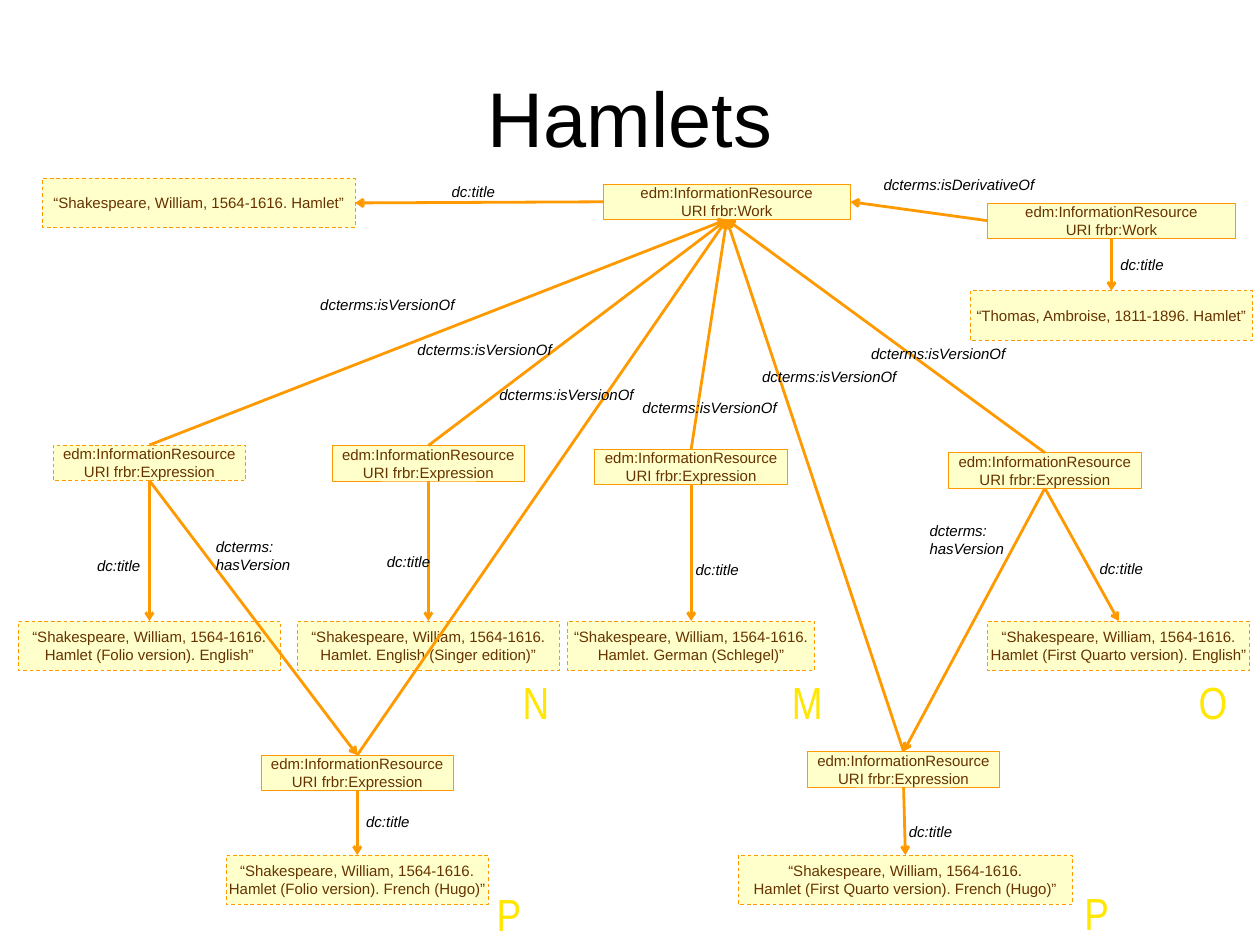
from dataclasses import dataclass

from pptx import Presentation
from pptx.dml.color import RGBColor
from pptx.enum import dml, shapes, text
from pptx.oxml.ns import qn
from pptx.util import Emu, Inches, Pt
from lxml import etree

# Slide and its grid: 140 columns by 105 rows
WIDTH, HEIGHT = Inches(14), Inches(10.5)
COL, ROW = WIDTH / 140, HEIGHT / 105

CREAM = RGBColor(0xFF, 0xFF, 0xCC)
ORANGE = RGBColor(0xFF, 0x99, 0x00)
BROWN = RGBColor(0x66, 0x33, 0x00)
BLACK = RGBColor(0x00, 0x00, 0x00)
YELLOW = RGBColor(0xFF, 0xE7, 0x01)

# Connection sites of a rectangle
TOP, LEFT, BOTTOM, RIGHT = range(4)

RESOURCE_H, LITERAL_H, LETTER_W = 3.95, 5.5, 3.5
WORK = ("edm:InformationResource", "URI frbr:Work")
EXPRESSION = ("edm:InformationResource", "URI frbr:Expression")
VERSION = ("dcterms:isVersionOf",)
HAS_VERSION = ("dcterms:", "hasVersion")
TITLE = ("dc:title",)
AUTHOR = "“Shakespeare, William, 1564-1616."


@dataclass
class Node:
    """A box placed by its centre column and its top row."""
    centre: float
    top: float
    width: float
    lines: tuple[str, ...]
    height: float = RESOURCE_H
    dashed: bool = False


@dataclass
class Link:
    """An arrow between two nodes, with its label's column and row."""
    start: str
    end: str
    label: tuple[str, ...]
    col: float
    row: float
    sites: tuple[int, int] = (BOTTOM, TOP)


def work(centre: float, top: float) -> Node:
    return Node(centre, top, 27.5, WORK)


def expression(centre: float, top: float, dashed: bool = False) -> Node:
    return Node(centre, top, 21.4, EXPRESSION, dashed=dashed)


def literal(centre: float, top: float, width: float, *lines: str) -> Node:
    return Node(centre, top, width, lines, LITERAL_H, True)


def version(start: str, col: float, row: float) -> Link:
    return Link(start, "work", VERSION, col, row, (TOP, BOTTOM))


NODES = {
    "work": work(80.75, 20.45),
    "opera": work(123.5, 22.55),
    "folio": expression(16.6, 49.45, dashed=True),
    "singer": expression(47.6, 49.5),
    "schlegel": expression(76.8, 49.9),
    "quarto": expression(116.1, 50.3),
    "folio_fr": expression(39.7, 83.9),
    "quarto_fr": expression(100.4, 83.5),
    "work_title": literal(22.1, 19.8, 34.7, "“Shakespeare, William, 1564-1616. Hamlet”"),
    "opera_title": literal(123.5, 32.3, 31.4, "“Thomas, Ambroise, 1811-1896. Hamlet”"),
    "folio_title": literal(16.6, 69, 29.1, AUTHOR, "Hamlet (Folio version). English”"),
    "singer_title": literal(47.6, 69, 29.1, AUTHOR, "Hamlet. English (Singer edition)”"),
    "schlegel_title": literal(76.8, 69, 27.4, AUTHOR, "Hamlet. German (Schlegel)”"),
    "quarto_title": literal(124.3, 69, 29.1, AUTHOR, "Hamlet (First Quarto version). English”"),
    "folio_fr_title": literal(39.7, 95, 29.1, AUTHOR, "Hamlet (Folio version). French (Hugo)”"),
    "quarto_fr_title": literal(100.6, 95, 37.1, AUTHOR, "Hamlet (First Quarto version). French (Hugo)”"),
}

LINKS = [
    version("folio", 34.6, 32.3),
    version("singer", 45.4, 37.4),
    version("folio_fr", 54.5, 42.3),
    version("schlegel", 70.4, 43.8),
    version("quarto_fr", 83.7, 40.4),
    version("quarto", 95.8, 37.8),
    Link("opera", "work", ("dcterms:isDerivativeOf",), 97.2, 19, (LEFT, RIGHT)),
    Link("work", "work_title", TITLE, 49.2, 19.8, (LEFT, RIGHT)),
    Link("opera", "opera_title", TITLE, 123.5, 27.9),
    Link("folio", "folio_title", TITLE, 9.8, 61.3),
    Link("singer", "singer_title", TITLE, 42, 60.9),
    Link("schlegel", "schlegel_title", TITLE, 76.3, 61.8),
    Link("quarto", "quarto_title", TITLE, 121.2, 61.7),
    Link("folio_fr", "folio_fr_title", TITLE, 39.7, 89.8),
    Link("quarto_fr", "quarto_fr_title", TITLE, 100, 90.9),
    Link("folio", "folio_fr", HAS_VERSION, 23, 59.2),
    Link("quarto", "quarto_fr", HAS_VERSION, 102.3, 57.5),
]

LETTERS = [("N", 57.1, 74.5), ("M", 87, 74.5), ("O", 132.2, 74.5),
           ("P", 54.2, 98), ("P", 119.5, 97.9)]


def place(col: float, row: float, cols: float, rows: float) -> tuple[Emu, ...]:
    return (Emu(round(col * COL)), Emu(round(row * ROW)),
            Emu(round(cols * COL)), Emu(round(rows * ROW)))


def write(tf, lines: tuple[str, ...], size: float, color: RGBColor,
          font: str = "Arial", align=text.PP_ALIGN.CENTER, italic: bool = False,
          breaks: bool = False) -> None:
    """Write lines as paragraphs, or as one paragraph with line breaks."""
    p = tf.paragraphs[0]
    for i, line in enumerate(lines):
        if i and breaks:
            p.add_line_break()
        elif i:
            p = tf.add_paragraph()
        p.alignment = align
        r = p.add_run()
        r.text = line
        r.font.size, r.font.name, r.font.italic = Pt(size), font, italic
        r.font.color.rgb = color


def draw_node(slide, node: Node):
    sp = slide.shapes.add_shape(
        shapes.MSO_SHAPE.RECTANGLE,
        *place(node.centre - node.width / 2, node.top, node.width, node.height))
    sp.shadow.inherit = False
    sp.fill.solid()
    sp.fill.fore_color.rgb = CREAM
    sp.line.color.rgb, sp.line.width = ORANGE, Pt(0.75)
    if node.dashed:
        sp.line.dash_style = dml.MSO_LINE.DASH
    tf = sp.text_frame
    tf.word_wrap = False
    tf.vertical_anchor = text.MSO_ANCHOR.MIDDLE
    write(tf, node.lines, 12, BROWN, breaks=node.height == LITERAL_H)
    return sp


def draw_arrow(slide, link: Link, boxes: dict) -> None:
    cx = slide.shapes.add_connector(shapes.MSO_CONNECTOR.STRAIGHT, 0, 0, 0, 0)
    cx.begin_connect(boxes[link.start], link.sites[0])
    cx.end_connect(boxes[link.end], link.sites[1])
    cx.line.color.rgb, cx.line.width = ORANGE, Pt(2.25)
    etree.SubElement(cx.line._get_or_add_ln(), qn("a:tailEnd"), type="arrow")
    etree.SubElement(cx._element.spPr, qn("a:effectLst"))


def draw_label(slide, link: Link) -> None:
    width = {TITLE: 6.8, VERSION: 17.1, HAS_VERSION: 10.3}.get(link.label, 18.9)
    tf = slide.shapes.add_textbox(
        *place(link.col, link.row, width, 1 + 2 * len(link.label))).text_frame
    tf.word_wrap = False
    tf.auto_size = text.MSO_AUTO_SIZE.SHAPE_TO_FIT_TEXT
    write(tf, link.label, 12, BLACK, align=text.PP_ALIGN.LEFT, italic=True)


def draw_letter(slide, letter: str, col: float, row: float) -> None:
    tf = slide.shapes.add_textbox(*place(col, row, LETTER_W, 5.6)).text_frame
    tf.word_wrap = False
    write(tf, (letter,), 36, YELLOW, "Arial Narrow")


def main() -> None:
    prs = Presentation()
    prs.slide_width, prs.slide_height = WIDTH, HEIGHT
    slide = prs.slides.add_slide(prs.slide_layouts[5])

    # Title
    title = slide.shapes.title
    title.left, title.top, title.width, title.height = place(7, 4.2, 126, 17.5)
    tf = title.text_frame
    tf.vertical_anchor = text.MSO_ANCHOR.MIDDLE
    tf.margin_left = tf.margin_right = Inches(0.14)
    tf.margin_top = tf.margin_bottom = Inches(0.07)
    write(tf, ("Hamlets",), 62, BLACK)

    # Graph: boxes, then arrows, then their labels
    boxes = {name: draw_node(slide, node) for name, node in NODES.items()}
    for link in LINKS:
        draw_arrow(slide, link, boxes)
    for link in LINKS:
        draw_label(slide, link)

    # Provider letters
    for letter, col, row in LETTERS:
        draw_letter(slide, letter, col, row)

    prs.save("out.pptx")


if __name__ == "__main__":
    main()
